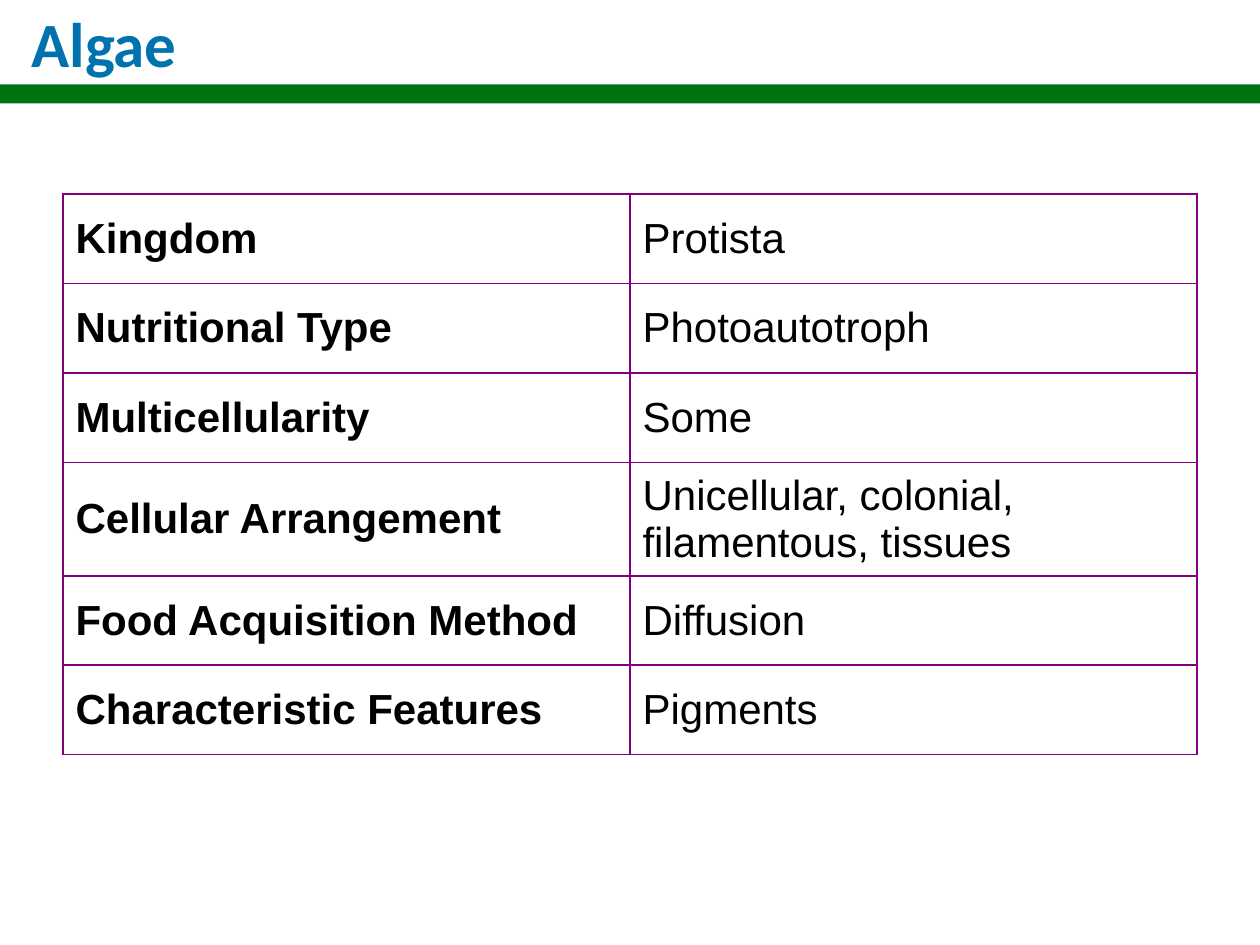
import pptx
import pptx.util
import pptx.dml.color
import pptx.enum.shapes
import pptx.enum.text
import pptx.oxml
import pptx.oxml.ns
from lxml import etree
from pptx.util import Inches

THEME = {
    "title": "0073AE", "bar": "007311", "text": "000000", "border": "800080",
    "title_font": "Calibri", "body_font": "Arial",
    "title_size": 36, "body_size": 24, "border_width": 1,
}


def write(tf, text, font=THEME["body_font"], size=THEME["body_size"],
          color=THEME["text"], bold=False, spacing=None):
    p = tf.paragraphs[0]
    p.alignment = pptx.enum.text.PP_ALIGN.LEFT
    if spacing:
        p.line_spacing = spacing
    r = p.add_run()
    r.text = text
    r.font.name = font
    r.font.size = pptx.util.Pt(size)
    r.font.bold = bold
    r.font.color.rgb = pptx.dml.color.RGBColor.from_string(color)


def add_borders(cell):
    tc_pr = cell._tc.get_or_add_tcPr()
    for i, side in enumerate(("lnL", "lnR", "lnT", "lnB")):
        ln = etree.Element(pptx.oxml.ns.qn("a:" + side),
                           w=str(pptx.util.Pt(THEME["border_width"])))
        fill = etree.SubElement(ln, pptx.oxml.ns.qn("a:solidFill"))
        etree.SubElement(fill, pptx.oxml.ns.qn("a:srgbClr"), val=THEME["border"])
        tc_pr.insert(i, ln)


prs = pptx.Presentation()
prs.slide_width, prs.slide_height = Inches(10), Inches(7.5)
s = prs.slides.add_slide(prs.slide_layouts[5])

bar = s.shapes.add_shape(pptx.enum.shapes.MSO_SHAPE.RECTANGLE,
                         Inches(0), Inches(0.67), Inches(10), Inches(0.15))
bar.shadow.inherit = False
bar.fill.solid()
bar.fill.fore_color.rgb = pptx.dml.color.RGBColor.from_string(THEME["bar"])
bar.line.fill.background()

title = s.shapes.title
title.left, title.top = Inches(0.25), Inches(0)
title.width, title.height = Inches(9.5), Inches(0.75)
tf = title.text_frame
tf.margin_left = tf.margin_top = tf.margin_right = tf.margin_bottom = 0
tf.vertical_anchor = pptx.enum.text.MSO_ANCHOR.MIDDLE
tf.auto_size = pptx.enum.text.MSO_AUTO_SIZE.NONE
write(tf, "Algae", font=THEME["title_font"], size=THEME["title_size"],
      color=THEME["title"], bold=True, spacing=0.9)

traits = [
    ("Kingdom", "Protista", 0.71),
    ("Nutritional Type", "Photoautotroph", 0.71),
    ("Multicellularity", "Some", 0.71),
    ("Cellular Arrangement", "Unicellular, colonial, filamentous, tissues", 0.9),
    ("Food Acquisition Method", "Diffusion", 0.71),
    ("Characteristic Features", "Pigments", 0.71),
]
height = sum(trait[2] for trait in traits)
table = s.shapes.add_table(len(traits), 2, Inches(0.5), Inches(1.54),
                           Inches(9), Inches(height)).table
table.first_row = table.horz_banding = False
for row, (name, value, row_height) in zip(table.rows, traits):
    row.height = Inches(row_height)
    for cell, text, bold in zip(row.cells, (name, value), (True, False)):
        cell.fill.background()
        cell.vertical_anchor = pptx.enum.text.MSO_ANCHOR.MIDDLE
        add_borders(cell)
        write(cell.text_frame, text, bold=bold)

prs.save("out.pptx")
